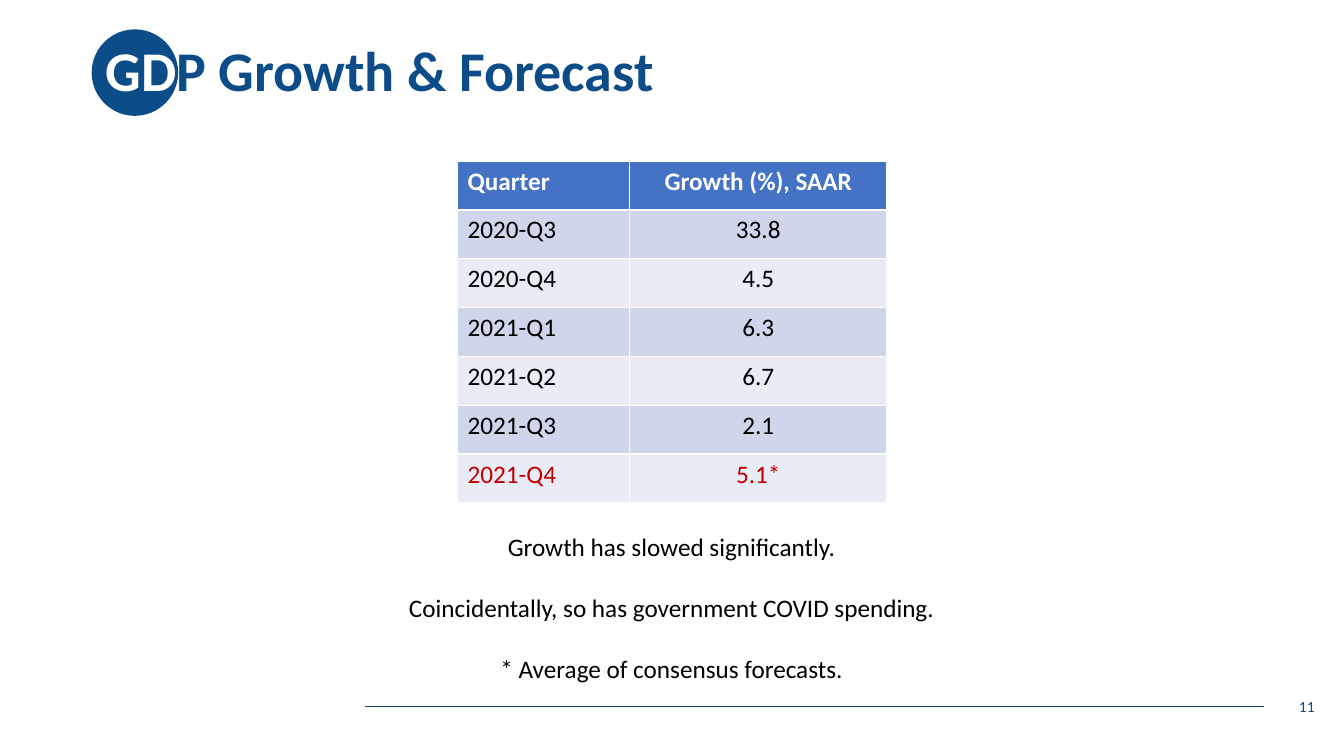
from lxml.etree import SubElement
from pptx import Presentation
from pptx.dml.color import RGBColor
from pptx.enum.shapes import MSO_CONNECTOR, MSO_SHAPE
from pptx.enum.text import MSO_ANCHOR, MSO_AUTO_SIZE, PP_ALIGN
from pptx.oxml.ns import qn
from pptx.util import Cm, Pt

COLORS = {
    "navy": "0C4C88",
    "header": "4472C4",
    "band_dark": "CFD5EA",
    "band_light": "E9EBF5",
    "forecast": "C00000",
    "black": "000000",
    "white": "FFFFFF",
}
GROWTH = [
    ("Quarter", "Growth (%), SAAR"),
    ("2020-Q3", "33.8"),
    ("2020-Q4", "4.5"),
    ("2021-Q1", "6.3"),
    ("2021-Q2", "6.7"),
    ("2021-Q3", "2.1"),
    ("2021-Q4", "5.1*"),
]
NOTES = [
    "Growth has slowed significantly.",
    "Coincidentally, so has government COVID spending.",
    "* Average of consensus forecasts.",
]


def rgb(name):
    """Return the named colour."""
    return RGBColor.from_string(COLORS[name])


def style_font(font, size, color, bold=False):
    """Set typeface, size, colour and weight."""
    font.name = "Calibri"
    font.size = Pt(size)
    font.bold = bold
    font.color.rgb = rgb(color)


def add_circle(s, left, top, size):
    """Add the navy circle behind the title."""
    sp = s.shapes.add_shape(MSO_SHAPE.OVAL, Cm(left), Cm(top), Cm(size), Cm(size))
    sp.shadow.inherit = False
    sp.fill.solid()
    sp.fill.fore_color.rgb = rgb("navy")
    sp.line.fill.background()


def add_rule(s, left, right, y):
    """Add the thin horizontal footer line."""
    line = s.shapes.add_connector(MSO_CONNECTOR.STRAIGHT, Cm(left), Cm(y), Cm(right), Cm(y))
    line.line.color.rgb = rgb("navy")
    line.line.width = Pt(0.5)
    SubElement(line._element.spPr, qn("a:effectLst"))


def add_text_frame(s, left, top, width, height, anchor=MSO_ANCHOR.MIDDLE):
    """Add a wrapping text box and return its text frame."""
    tf = s.shapes.add_textbox(Cm(left), Cm(top), Cm(width), Cm(height)).text_frame
    tf.word_wrap = True
    tf.vertical_anchor = anchor
    return tf


def add_title(s, parts):
    """Add the title from text and colour pairs."""
    p = add_text_frame(s, 2.41, 0, 29.21, 3.68).paragraphs[0]
    p.line_spacing = 0.9
    for text, color in parts:
        r = p.add_run()
        r.text = text
        style_font(r.font, 40, color, True)


def add_growth_table(s, rows):
    """Add the banded growth table with its forecast row in red."""
    widths = (4.34, 6.48)
    row_height = 1.23
    table = s.shapes.add_table(
        len(rows), len(widths), Cm(11.53), Cm(4.06), Cm(sum(widths)), Cm(row_height * len(rows))
    ).table
    for column, width in zip(table.columns, widths):
        column.width = Cm(width)
    for i, row in enumerate(rows):
        table.rows[i].height = Cm(row_height)
        if i == 0:
            fill, color = "header", "white"
        else:
            fill = "band_dark" if i % 2 else "band_light"
            color = "forecast" if i == len(rows) - 1 else "black"
        for j, text in enumerate(row):
            cell = table.cell(i, j)
            cell.fill.solid()
            cell.fill.fore_color.rgb = rgb(fill)
            p = cell.text_frame.paragraphs[0]
            p.text = text
            p.alignment = PP_ALIGN.CENTER if j else PP_ALIGN.LEFT
            style_font(p.runs[0].font, 18, color, i == 0)


def add_notes(s, lines):
    """Add the centred remarks below the table."""
    tf = add_text_frame(s, 9.98, 13.26, 13.89, 4.11, MSO_ANCHOR.TOP)
    tf.word_wrap = False
    tf.auto_size = MSO_AUTO_SIZE.SHAPE_TO_FIT_TEXT
    tf.text = "\n".join(lines)
    for i, p in enumerate(tf.paragraphs):
        p.alignment = PP_ALIGN.CENTER
        p.space_before = Pt(22 if i else 0)
        style_font(p.runs[0].font, 18, "black")


def add_page_number(s, number):
    """Add the page number at the lower right."""
    p = add_text_frame(s, 25.76, 17.3, 7.62, 1.02).paragraphs[0]
    p.text = number
    p.alignment = PP_ALIGN.RIGHT
    style_font(p.runs[0].font, 11, "navy")


def main():
    """Build and save the slide."""
    prs = Presentation()
    prs.slide_width, prs.slide_height = Cm(33.87), Cm(19.05)
    s = prs.slides.add_slide(prs.slide_layouts[6])
    add_rule(s, 9.19, 31.85, 17.81)
    add_circle(s, 2.31, 0.74, 2.18)
    add_title(s, [("GD", "white"), ("P Growth & Forecast", "navy")])
    add_growth_table(s, GROWTH)
    add_page_number(s, "11")
    add_notes(s, NOTES)
    prs.save("out.pptx")


if __name__ == "__main__":
    main()
